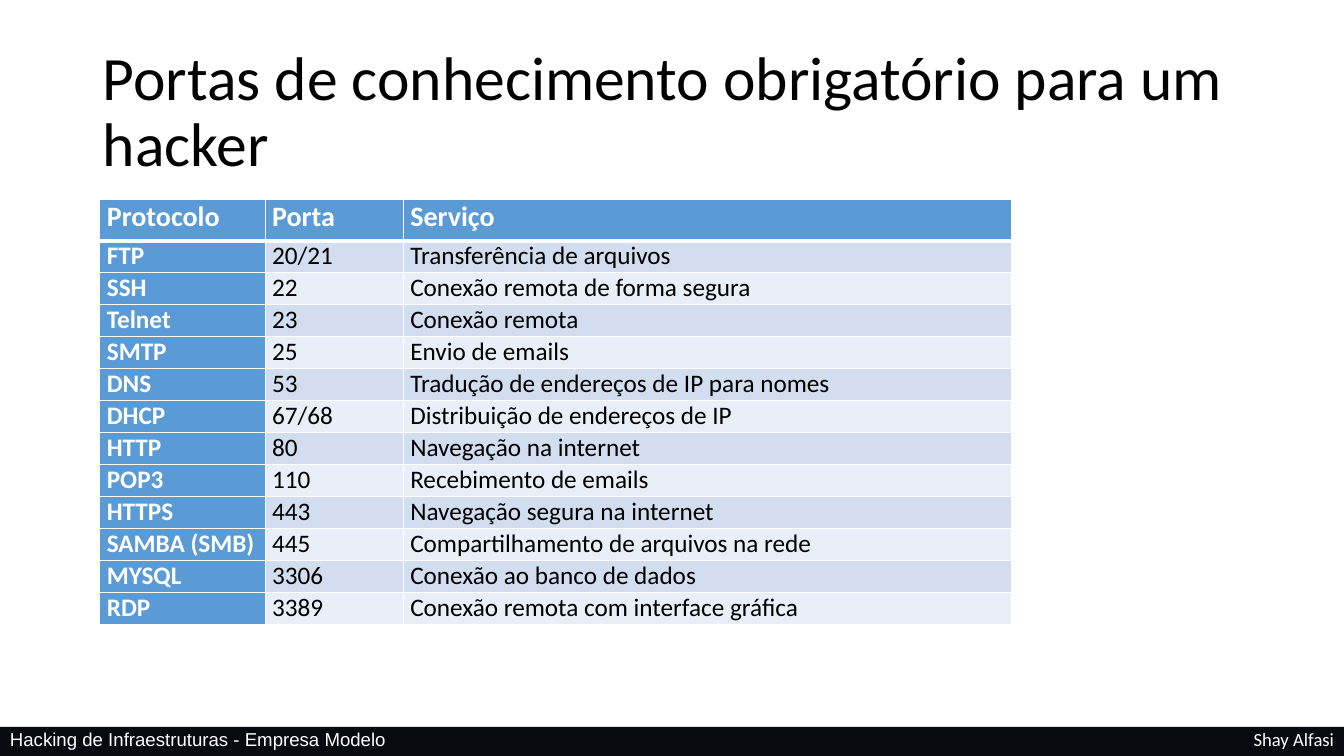
from lxml.etree import fromstring
from pptx import Presentation
from pptx.dml.color import RGBColor
from pptx.enum.shapes import MSO_SHAPE
from pptx.enum.text import MSO_ANCHOR, MSO_AUTO_SIZE, PP_ALIGN
from pptx.util import Inches, Pt

WHITE, BLACK, BLUE, FOOTER = "FFFFFF", "000000", "5B9BD5", "090911"
BANDS = ("D2DEEF", "EAEFF7")
DRAWING = "http://schemas.openxmlformats.org/drawingml/2006/main"

PORTS = [
    ("Protocolo", "Porta", "Serviço"),
    ("FTP", "20/21", "Transferência de arquivos"),
    ("SSH", "22", "Conexão remota de forma segura"),
    ("Telnet", "23", "Conexão remota"),
    ("SMTP", "25", "Envio de emails"),
    ("DNS", "53", "Tradução de endereços de IP para nomes"),
    ("DHCP", "67/68", "Distribuição de endereços de IP"),
    ("HTTP", "80", "Navegação na internet"),
    ("POP3", "110", "Recebimento de emails"),
    ("HTTPS", "443", "Navegação segura na internet"),
    ("SAMBA (SMB)", "445", "Compartilhamento de arquivos na rede"),
    ("MYSQL", "3306", "Conexão ao banco de dados"),
    ("RDP", "3389", "Conexão remota com interface gráfica"),
]


def paint(target, color):
    target.solid()
    target.fore_color.rgb = RGBColor.from_string(color)


def write(frame, text, size, color, font="Calibri", bold=False, align=PP_ALIGN.LEFT):
    frame.text = text
    para = frame.paragraphs[0]
    para.alignment = align
    span = para.runs[0].font
    span.name, span.size, span.bold = font, Pt(size), bold
    paint(span.fill, color)


def set_borders(cell, bottom_width):
    widths = {"lnL": 1, "lnR": 1, "lnT": 1, "lnB": bottom_width}
    properties = cell._tc.get_or_add_tcPr()
    for position, (side, width) in enumerate(widths.items()):
        properties.insert(position, fromstring(
            f'<a:{side} xmlns:a="{DRAWING}" w="{Pt(width)}"><a:solidFill>'
            f'<a:srgbClr val="{WHITE}"/></a:solidFill></a:{side}>'))


def add_footer(page, left, top, width, height):
    bar = page.shapes.add_shape(MSO_SHAPE.RECTANGLE, Inches(left), Inches(top),
                                Inches(width), Inches(height))
    bar.shadow.inherit = False
    paint(bar.fill, FOOTER)
    bar.line.fill.background()

    # Course name on the left, author on the right
    course_width, author_width = 8.35, 6.41
    labels = [
        ("Hacking de Infraestruturas - Empresa Modelo", left, course_width, "Arial", PP_ALIGN.LEFT),
        ("Shay Alfasi", left + width - author_width, author_width, "Calibri", PP_ALIGN.RIGHT),
    ]
    for text, label_left, label_width, font, align in labels:
        box = page.shapes.add_textbox(Inches(label_left), Inches(top - 0.04),
                                      Inches(label_width), Inches(0.33))
        box.text_frame.word_wrap = True
        write(box.text_frame, text, 13.3, WHITE, font, align=align)


def add_title(page, left, top, width, height):
    title = page.shapes.title
    title.left, title.top = Inches(left), Inches(top)
    title.width, title.height = Inches(width), Inches(height)
    frame = title.text_frame
    write(frame, "Portas de conhecimento obrigatório para um hacker", 44, BLACK)
    frame.word_wrap = True
    frame.auto_size = MSO_AUTO_SIZE.NONE
    frame.vertical_anchor = MSO_ANCHOR.MIDDLE
    frame.paragraphs[0].line_spacing = 0.9


def add_port_table(page, left, top, width, height):
    table = page.shapes.add_table(len(PORTS), len(PORTS[0]), Inches(left), Inches(top),
                                  Inches(width), Inches(height)).table
    table.first_col = True
    protocol_width, port_width, header_height = 1.64, 1.37, 0.41
    column_widths = (protocol_width, port_width, width - protocol_width - port_width)
    for column, column_width in zip(table.columns, column_widths):
        column.width = Inches(column_width)

    for row_index, entry in enumerate(PORTS):
        is_header = row_index == 0
        row_height = header_height if is_header else (height - header_height) / (len(PORTS) - 1)
        table.rows[row_index].height = Inches(row_height)
        for column_index, text in enumerate(entry):
            cell = table.cell(row_index, column_index)
            strong = is_header or column_index == 0
            cell.margin_left = cell.margin_right = Inches(0.07)
            cell.margin_top = cell.margin_bottom = 0
            write(cell.text_frame, text, 20 if is_header else 18,
                  WHITE if strong else BLACK, bold=strong)
            paint(cell.fill, BLUE if strong else BANDS[(row_index - 1) % 2])
            set_borders(cell, 3 if is_header else 1)


def main():
    deck = Presentation()
    deck.slide_width, deck.slide_height = Inches(13.33), Inches(7.5)
    page = deck.slides.add_slide(deck.slide_layouts[5])
    add_footer(page, 0, 7.21, 13.33, 0.29)
    add_title(page, 0.92, 0.4, 11.5, 1.45)
    add_port_table(page, 0.99, 1.98, 9.04, 4.22)
    deck.save("out.pptx")


if __name__ == "__main__":
    main()
